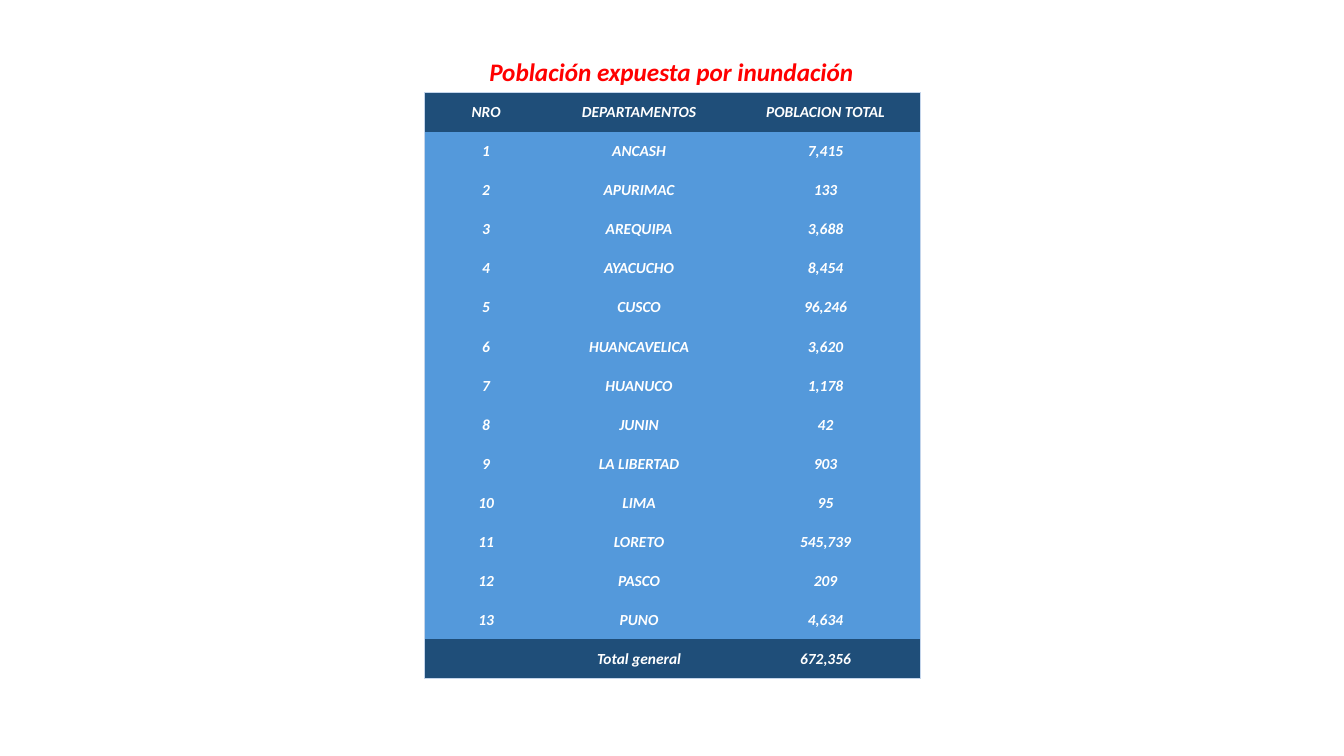
from dataclasses import dataclass

from lxml import etree
from pptx import Presentation
from pptx import util as u
from pptx.dml import color
from pptx.enum import text
from pptx.oxml import ns

COLORS = {
    "title": "FF0000",
    "band": "1F4E79",
    "body": "5499DB",
    "text": "FFFFFF",
    "border": "C4D5EB",
}
FONT = "Calibri"
COLUMN_WIDTHS = (3.1, 4.61, 4.79)
TABLE_HEIGHT = 14.76


@dataclass(frozen=True)
class Row:
    number: str
    department: str
    population: str
    fill: str = "body"


DEPARTMENTS = (
    ("ANCASH", 7415),
    ("APURIMAC", 133),
    ("AREQUIPA", 3688),
    ("AYACUCHO", 8454),
    ("CUSCO", 96246),
    ("HUANCAVELICA", 3620),
    ("HUANUCO", 1178),
    ("JUNIN", 42),
    ("LA LIBERTAD", 903),
    ("LIMA", 95),
    ("LORETO", 545739),
    ("PASCO", 209),
    ("PUNO", 4634),
)
ROWS = [
    Row("NRO", "DEPARTAMENTOS", "POBLACION TOTAL", "band"),
    *(Row(str(number), name, f"{population:,}")
      for number, (name, population) in enumerate(DEPARTMENTS, 1)),
    Row("", "Total general", f"{672356:,}", "band"),
]


def write(frame, content: str, size: float, color_name: str) -> None:
    """Put one centred bold italic line in a text frame."""
    frame.text = content
    line = frame.paragraphs[0]
    line.alignment = text.PP_ALIGN.CENTER
    for run in line.runs:
        run.font.name = FONT
        run.font.size = u.Pt(size)
        run.font.bold = run.font.italic = True
        run.font.color.rgb = color.RGBColor.from_string(COLORS[color_name])


def set_borders(cell, outer_sides: dict[str, bool]) -> None:
    """Draw the outer sides of a cell and clear the inner ones."""
    properties = cell._tc.get_or_add_tcPr()
    for position, (side, is_outer) in enumerate(outer_sides.items()):
        border = etree.Element(ns.qn(f"a:ln{side}"), w=str(u.Pt(0.5)))
        if is_outer:
            fill = etree.SubElement(border, ns.qn("a:solidFill"))
            etree.SubElement(fill, ns.qn("a:srgbClr"), val=COLORS["border"])
        else:
            etree.SubElement(border, ns.qn("a:noFill"))
        properties.insert(position, border)


def add_title(slide) -> None:
    title = slide.shapes.add_textbox(u.Cm(12.07), u.Cm(1.3), u.Cm(9.7), u.Cm(1.02))
    frame = title.text_frame
    frame.margin_left = frame.margin_right = 0
    frame.word_wrap = False
    frame.auto_size = text.MSO_AUTO_SIZE.SHAPE_TO_FIT_TEXT
    write(frame, "Población expuesta por inundación", 18, "title")


def add_population_table(slide) -> None:
    last_row, last_column = len(ROWS) - 1, len(COLUMN_WIDTHS) - 1
    population = slide.shapes.add_table(
        len(ROWS), len(COLUMN_WIDTHS), u.Cm(10.7), u.Cm(2.33),
        u.Cm(sum(COLUMN_WIDTHS)), u.Cm(TABLE_HEIGHT)).table
    population.first_row = population.horz_banding = False
    for column, width in zip(population.columns, COLUMN_WIDTHS):
        column.width = u.Cm(width)

    for i, row in enumerate(ROWS):
        for j, content in enumerate((row.number, row.department, row.population)):
            cell = population.cell(i, j)
            cell.margin_left = cell.margin_right = cell.margin_top = u.Cm(0.02)
            cell.margin_bottom = 0
            cell.vertical_anchor = text.MSO_ANCHOR.MIDDLE
            cell.fill.solid()
            cell.fill.fore_color.rgb = color.RGBColor.from_string(COLORS[row.fill])
            write(cell.text_frame, content, 11, "text")
            set_borders(cell, {"L": j == 0, "R": j == last_column,
                               "T": i == 0, "B": i == last_row})


def main() -> None:
    presentation = Presentation()
    presentation.slide_width = u.Cm(33.87)
    presentation.slide_height = u.Cm(19.05)
    slide = presentation.slides.add_slide(presentation.slide_layouts[6])
    add_title(slide)
    add_population_table(slide)
    presentation.save("out.pptx")


if __name__ == "__main__":
    main()
